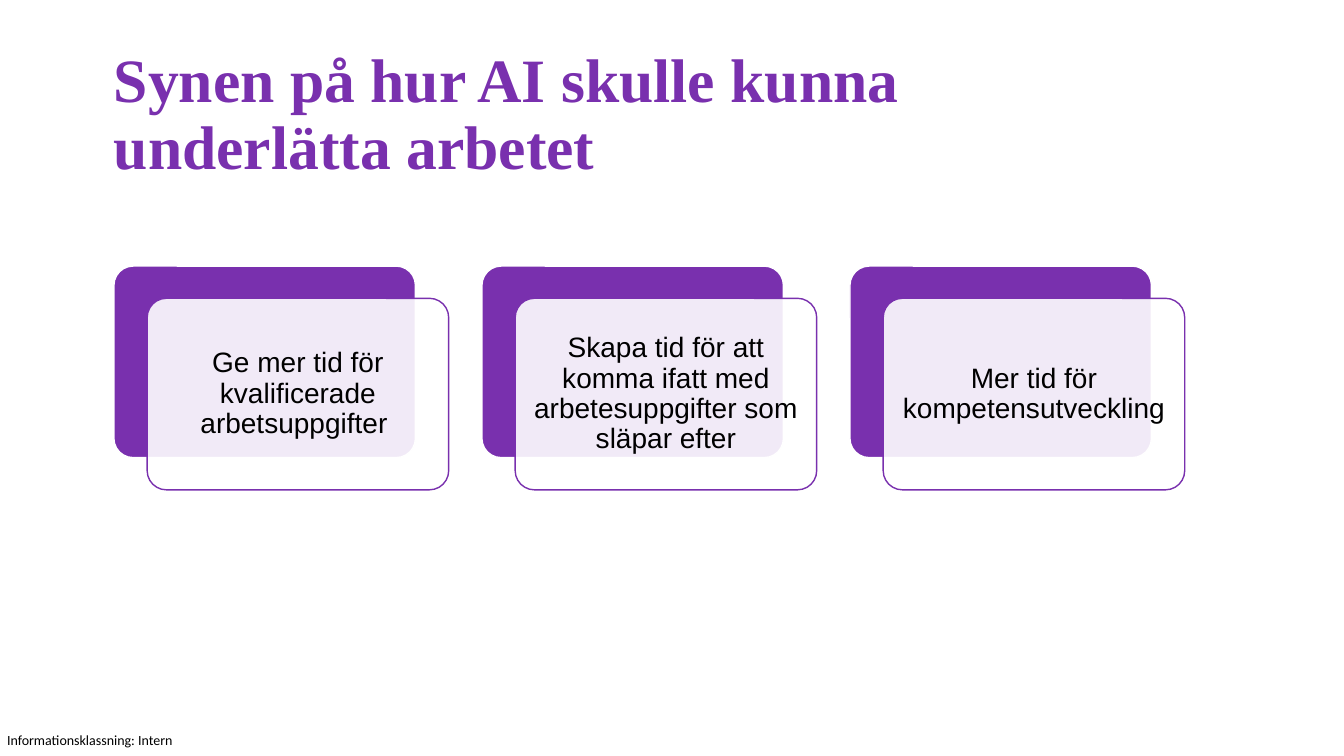
from dataclasses import dataclass
from lxml import etree
from pptx import Presentation
from pptx.dml.color import RGBColor
from pptx.enum.shapes import MSO_SHAPE
from pptx.enum.text import MSO_ANCHOR, PP_ALIGN
from pptx.oxml.ns import qn
from pptx.util import Pt

ROUND = MSO_SHAPE.ROUNDED_RECTANGLE
TOP, MID = MSO_ANCHOR.TOP, MSO_ANCHOR.MIDDLE
LEFT, MIDDLE = PP_ALIGN.LEFT, PP_ALIGN.CENTER
SCALE = 9144


@dataclass(frozen=True)
class Theme:
    accent: str = "7930AE"
    paper: str = "FFFFFF"
    ink: str = "000000"
    title: int = 44
    body: int = 20
    note: int = 10


@dataclass(frozen=True)
class Box:
    x: int
    y: int
    w: int
    h: int

    def move(self, dx: int, dy: int = 0) -> "Box":
        return Box(self.x + dx, self.y + dy, self.w, self.h)

    def emu(self) -> tuple[int, ...]:
        return tuple(v * SCALE for v in (self.x, self.y, self.w, self.h))


THEME = Theme()
HEAD = Box(113, 49, 1063, 142)
NOTE = Box(7, 726, 168, 17)
BACK = Box(113, 264, 299, 190)
STEP = 365
SHIFT = (33, 32)
CARDS = (
    "Ge mer tid för kvalificerade arbetsuppgifter ",
    "Skapa tid för att komma ifatt med arbetesuppgifter som släpar efter",
    "Mer tid för kompetensutveckling",
)


def write(shape, text: str, *, font: str, size: int, color: str = THEME.ink,
          bold: bool = False, align=LEFT, anchor=TOP, inset: int = 0,
          space: float = 1.0, wrap: bool = True) -> None:
    frame = shape.text_frame
    frame.word_wrap = wrap
    frame.vertical_anchor = anchor
    frame.margin_left = frame.margin_right = inset * SCALE
    frame.margin_top = frame.margin_bottom = inset * SCALE
    para = frame.paragraphs[0]
    para.alignment = align
    para.line_spacing = space
    run = para.add_run()
    run.text = text
    run.font.name = font
    run.font.size = Pt(size)
    run.font.bold = bold
    run.font.color.rgb = RGBColor.from_string(color)


def panel(slide, box: Box, fill: str, line: str, alpha: int = 100):
    shape = slide.shapes.add_shape(ROUND, *box.emu())
    shape.adjustments[0] = 0.1
    shape.shadow.inherit = False
    shape.fill.solid()
    shape.fill.fore_color.rgb = RGBColor.from_string(fill)
    shape.line.color.rgb = RGBColor.from_string(line)
    shape.line.width = Pt(1)
    if alpha < 100:
        tint = shape.fill._xPr.find(qn("a:solidFill"))[0]
        etree.SubElement(tint, qn("a:alpha"), val=str(alpha * 1000))
    return shape


def card(slide, box: Box, text: str) -> None:
    panel(slide, box, THEME.accent, THEME.paper)
    front = panel(slide, box.move(*SHIFT), THEME.paper, THEME.accent, alpha=90)
    write(front, text, font="Arial", size=THEME.body, align=MIDDLE,
          anchor=MID, inset=8, space=0.9)


def main() -> None:
    deck = Presentation()
    deck.slide_width, deck.slide_height = 1333 * SCALE, 750 * SCALE
    slide = deck.slides.add_slide(deck.slide_layouts[6])
    write(slide.shapes.add_textbox(*NOTE.emu()), "Informationsklassning: Intern",
          font="Calibri", size=THEME.note, wrap=False)
    write(slide.shapes.add_textbox(*HEAD.emu()),
          "Synen på hur AI skulle kunna underlätta arbetet",
          font="Times New Roman", size=THEME.title, color=THEME.accent,
          bold=True, space=0.9)
    for i, text in enumerate(CARDS):
        card(slide, BACK.move(i * STEP), text)
    deck.save("out.pptx")


if __name__ == "__main__":
    main()
